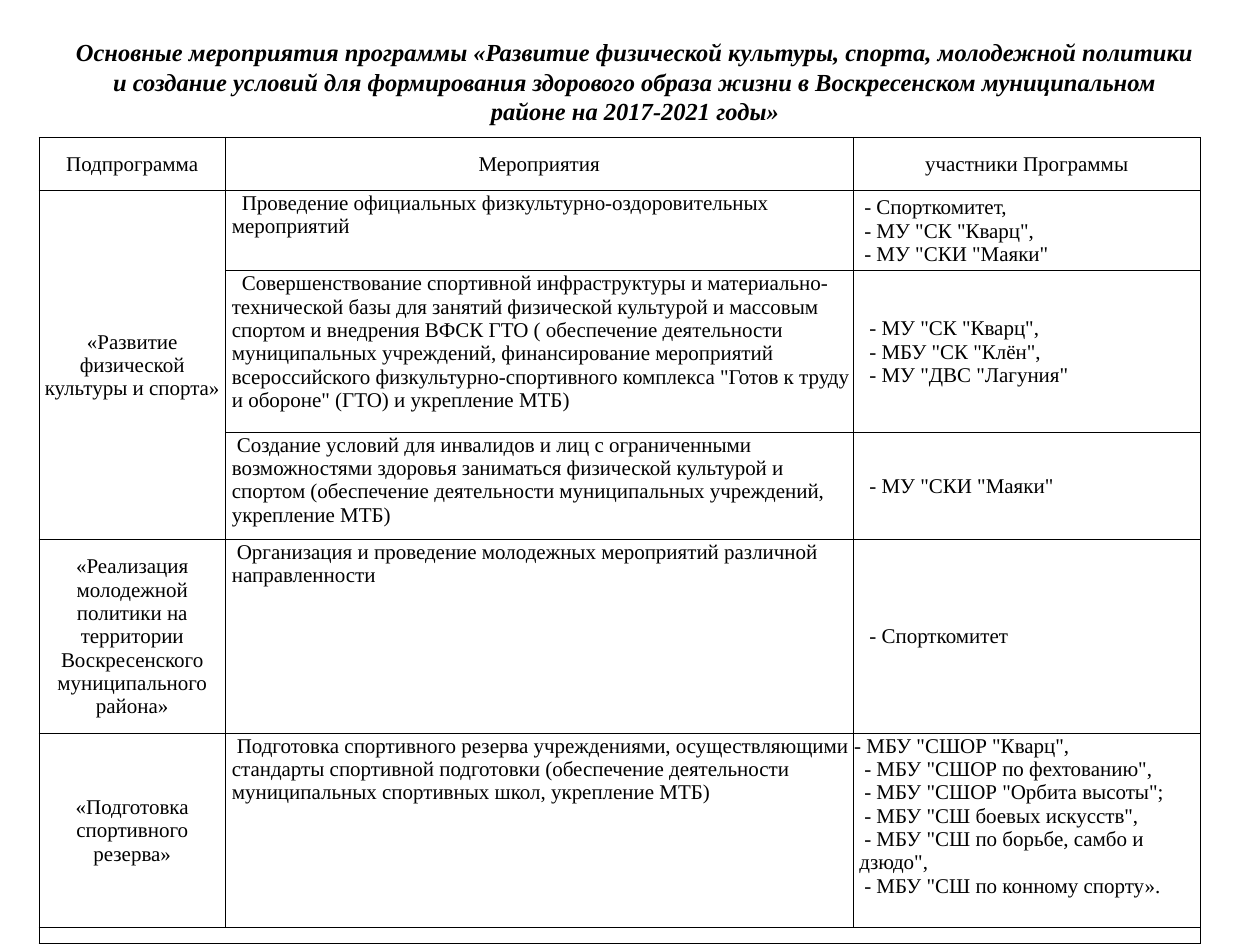
from dataclasses import dataclass, field

from lxml import etree
from pptx import Presentation, util as u
from pptx.dml.color import RGBColor
from pptx.enum import text
from pptx.oxml.ns import qn

COLORS = {"page": "FFFFFF", "ink": "000000"}
FONT = "Times New Roman"
SPACE = 0.04  # one step of indent, inches
COLUMNS = [1.48, 4.98, 2.76]
ROWS = [0.42, 0.64, 1.28, 0.85, 1.54, 1.54, 0.13]
TOP, MIDDLE = text.MSO_ANCHOR.TOP, text.MSO_ANCHOR.MIDDLE
LEFT, CENTER = text.PP_ALIGN.LEFT, text.PP_ALIGN.CENTER


@dataclass
class Entry:
    """Lines of one cell; every line is indented by other unless steps names it."""
    lines: list[str]
    other: int = 1
    anchor: text.MSO_ANCHOR = MIDDLE
    steps: dict[int, int] = field(default_factory=dict)


@dataclass
class Activity:
    program: str
    action: Entry
    members: Entry


TITLE = ("Основные мероприятия программы «Развитие физической культуры, спорта, "
         "молодежной политики и создание условий для формирования здорового образа "
         "жизни в Воскресенском муниципальном районе на 2017-2021 годы»")
HEADINGS = ["Подпрограмма", "Мероприятия", "участники Программы"]
ACTIVITIES = [
    Activity(
        "«Развитие физической культуры и спорта»",
        Entry(["Проведение официальных физкультурно-оздоровительных",
               "мероприятий"], 1, TOP, {0: 3}),
        Entry(["- Спорткомитет,", '- МУ "СК "Кварц",', '- МУ "СКИ "Маяки"'], 2)),
    Activity(
        "",
        Entry(["Совершенствование спортивной инфраструктуры и материально-",
               "технической базы для занятий физической культурой и массовым",
               "спортом и внедрения ВФСК ГТО ( обеспечение деятельности",
               "муниципальных учреждений, финансирование мероприятий",
               'всероссийского физкультурно-спортивного комплекса "Готов к труду',
               'и обороне" (ГТО) и укрепление МТБ)'], 1, TOP, {0: 3}),
        Entry(['- МУ "СК "Кварц",', '- МБУ "СК "Клён",', '- МУ "ДВС "Лагуния"'], 3)),
    Activity(
        "",
        Entry(["Создание условий для инвалидов и лиц с ограниченными",
               "возможностями здоровья заниматься физической культурой и",
               "спортом (обеспечение деятельности муниципальных учреждений,",
               "укрепление МТБ)"], 1, TOP, {0: 2}),
        Entry(['- МУ "СКИ "Маяки"'], 3)),
    Activity(
        "«Реализация молодежной политики на территории Воскресенского "
        "муниципального района»",
        Entry(["Организация и проведение молодежных мероприятий различной",
               "направленности"], 1, TOP, {0: 2}),
        Entry(["- Спорткомитет"], 3)),
    Activity(
        "«Подготовка спортивного резерва»",
        Entry(["Подготовка спортивного резерва учреждениями, осуществляющими",
               "стандарты спортивной подготовки (обеспечение деятельности",
               "муниципальных спортивных школ, укрепление МТБ)"], 1, TOP, {0: 2}),
        Entry(['- МБУ "СШОР "Кварц",', '- МБУ "СШОР по фехтованию",',
               '- МБУ "СШОР "Орбита высоты";', '- МБУ "СШ боевых искусств",',
               '- МБУ "СШ по борьбе, самбо и', 'дзюдо",',
               '- МБУ "СШ по конному спорту».'], 2, TOP, {0: 0, 5: 1})),
]


def write(para, words: str, *, size: float = 12, align=LEFT, steps: int = 0,
          bold: bool = False, italic: bool = False) -> None:
    para.alignment = align
    if steps:
        para._p.get_or_add_pPr().set("marL", str(u.Inches(steps * SPACE)))
    span = para.add_run()
    span.text = words
    font = span.font
    font.name, font.size, font.bold, font.italic = FONT, u.Pt(size), bold, italic
    font.color.rgb = RGBColor.from_string(COLORS["ink"])


def style_cell(cell) -> None:
    """Thin border on every side, no fill and narrow margins."""
    cell.margin_left = cell.margin_right = cell.margin_top = u.Inches(0.01)
    cell.margin_bottom = 0
    props = cell._tc.get_or_add_tcPr()
    for side in ("a:lnL", "a:lnR", "a:lnT", "a:lnB"):
        line = etree.SubElement(props, qn(side), w=str(u.Pt(0.5)))
        fill = etree.SubElement(line, qn("a:solidFill"))
        etree.SubElement(fill, qn("a:srgbClr"), val=COLORS["ink"])
    cell.fill.background()


def fill_cell(cell, entry: Entry, align=LEFT) -> None:
    cell.vertical_anchor = entry.anchor
    frame = cell.text_frame
    for index, words in enumerate(entry.lines):
        para = frame.add_paragraph() if index else frame.paragraphs[0]
        write(para, words, align=align, steps=entry.steps.get(index, entry.other))


def add_title(page) -> None:
    box = page.shapes.add_textbox(u.Inches(0.5), u.Inches(0.25),
                                  u.Inches(9.08), u.Inches(0.79))
    frame = box.text_frame
    frame.word_wrap = True
    frame.vertical_anchor = MIDDLE
    write(frame.paragraphs[0], TITLE, size=14, align=CENTER, bold=True, italic=True)


def add_activities(page) -> None:
    frame = page.shapes.add_table(len(ROWS), len(COLUMNS), u.Inches(0.31), u.Inches(1.09),
                                  u.Inches(sum(COLUMNS)), u.Inches(sum(ROWS)))
    table = frame.table
    table.first_row = table.horz_banding = False
    for column, width in zip(table.columns, COLUMNS):
        column.width = u.Inches(width)
    for row, height in zip(table.rows, ROWS):
        row.height = u.Inches(height)
    for cell in table.iter_cells():
        style_cell(cell)

    # Header row
    for column, heading in enumerate(HEADINGS):
        fill_cell(table.cell(0, column), Entry([heading], 0), CENTER)

    # Activities
    for row, activity in enumerate(ACTIVITIES, start=1):
        if activity.program:
            fill_cell(table.cell(row, 0), Entry([activity.program], 0), CENTER)
        fill_cell(table.cell(row, 1), activity.action)
        fill_cell(table.cell(row, 2), activity.members)

    # Merged cells and the narrow closing row
    last = len(ROWS) - 1
    for column in range(len(COLUMNS)):
        para = table.cell(last, column).text_frame.paragraphs[0]
        etree.SubElement(para._p, qn("a:endParaRPr"), sz="600")
    table.cell(1, 0).merge(table.cell(3, 0))
    table.cell(last, 0).merge(table.cell(last, 2))


def main() -> None:
    deck = Presentation()
    deck.slide_width, deck.slide_height = u.Inches(10), u.Inches(7.5)
    page = deck.slides.add_slide(deck.slide_layouts[6])
    background = page.background.fill
    background.solid()
    background.fore_color.rgb = RGBColor.from_string(COLORS["page"])
    add_title(page)
    add_activities(page)
    deck.save("out.pptx")


if __name__ == "__main__":
    main()
